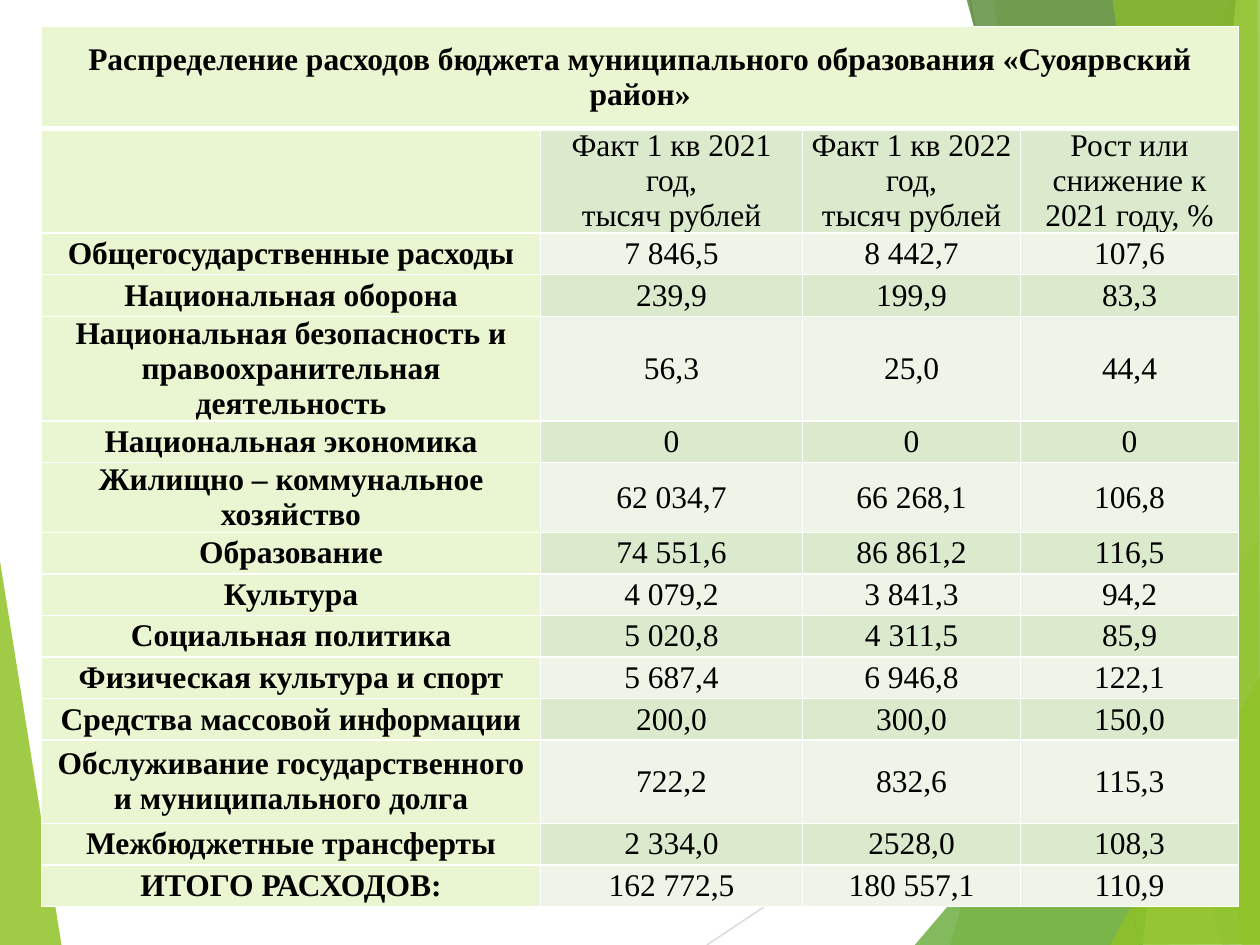
"""Builds the slide with the district budget expenditure table."""
from dataclasses import dataclass

from lxml.etree import SubElement
from pptx import Presentation
from pptx.dml.color import RGBColor
from pptx.enum.shapes import MSO_CONNECTOR as Connector
from pptx.enum.text import MSO_ANCHOR as Anchor, PP_ALIGN as Align
from pptx.oxml import parse_xml
from pptx.oxml.ns import nsdecls, qn
from pptx.util import Inches, Pt


@dataclass(frozen=True)
class Theme:
    font: str = "Times New Roman"
    size: int = 18
    text: str = "000000"
    border: str = "FFFFFF"
    label: str = "EAF6D1"
    dark_band: str = "DBE9CD"
    light_band: str = "EEF4E8"
    lime: str = "90C226"
    green: str = "54A021"
    forest: str = "3F7819"
    pale: str = "C0E474"
    pale_line: str = "D9D9D9"
    grey_line: str = "BFBFBF"


theme = Theme()


def add_facet(slide, color, opacity, corners):
    points = [(Inches(x), Inches(y)) for x, y in corners]
    builder = slide.shapes.build_freeform(*points[0])
    builder.add_line_segments(points[1:], close=True)
    facet = builder.convert_to_shape()
    facet.shadow.inherit = False
    facet.fill.solid()
    facet.fill.fore_color.rgb = RGBColor.from_string(color)
    facet.line.fill.background()
    fill_color = facet._element.spPr.find(qn("a:solidFill"))[0]
    SubElement(fill_color, qn("a:alpha")).set("val", str(opacity * 1000))


def fill_cell(cell, paragraphs, color, bold, anchor, top, bottom):
    cell.margin_left = cell.margin_right = Inches(0.07)
    cell.margin_top = cell.margin_bottom = 0
    cell.vertical_anchor = anchor
    cell.fill.solid()
    cell.fill.fore_color.rgb = RGBColor.from_string(color)
    for index, wording in enumerate(paragraphs):
        frame = cell.text_frame
        paragraph = frame.add_paragraph() if index else frame.paragraphs[0]
        paragraph.alignment = Align.CENTER
        run = paragraph.add_run()
        run.text = wording
        run.font.name = theme.font
        run.font.size = Pt(theme.size)
        run.font.bold = bold
        run.font.color.rgb = RGBColor.from_string(theme.text)
    sides = [("lnL", 1), ("lnR", 1), ("lnT", top), ("lnB", bottom)]
    for index, (side, width) in enumerate(sides):
        cell._tc.get_or_add_tcPr().insert(index, parse_xml(
            f'<a:{side} {nsdecls("a")} w="{Pt(width)}"><a:solidFill>'
            f'<a:srgbClr val="{theme.border}"/></a:solidFill></a:{side}>'))


prs = Presentation()
prs.slide_width, prs.slide_height = Inches(10), Inches(7.5)
slide = prs.slides.add_slide(prs.slide_layouts[6])

add_facet(slide, theme.lime, 85, [(-0.01, 4.39), (0.49, 7.51), (-0.01, 7.5)])

for color, start, end in [
    (theme.pale_line, (5.61, 7.5), (10.01, 4.57)),
    (theme.grey_line, (7.7, 0), (9.04, 7.5)),
]:
    ray = slide.shapes.add_connector(
        Connector.STRAIGHT, *[Inches(value) for value in start + end])
    ray.line.color.rgb = RGBColor.from_string(color)
    ray.line.width = Pt(0.75)
    SubElement(ray._element.spPr, qn("a:effectLst"))

for color, opacity, corners in [
    (theme.lime, 30, [(9.75, 0), (7.54, 7.5), (10.02, 7.51), (10.01, 0.01)]),
    (theme.lime, 20, [(7.88, -0.01), (9.19, 7.5), (10.01, 7.5), (10.01, -0.01)]),
    (theme.green, 72, [(7.26, 7.5), (10, 4.29), (10.01, 7.5)]),
    (theme.forest, 70, [(7.67, -0.01), (9.7, 7.5), (10.01, 7.49), (10.01, -0.01)]),
    (theme.pale, 70, [(9.81, -0.01), (9.07, 7.5), (10.01, 7.5), (10, -0.01)]),
    (theme.lime, 65, [(8.83, -0.01), (9.86, 7.5), (10, 7.5), (9.98, -0.01)]),
    (theme.lime, 80, [(8.81, 7.5), (10.01, 5.35), (10.01, 7.49)]),
]:
    add_facet(slide, color, opacity, corners)

title = "Распределение расходов бюджета муниципального образования «Суоярвский район»"
budget_rows = [
    (0.81, title, "", "", ""),
    (0.66, "", "Факт 1 кв 2021 год,\nтысяч рублей",
     "Факт 1 кв 2022 год,\nтысяч рублей", "Рост или снижение к 2021 году, %"),
    (0.33, "Общегосударственные расходы", "7 846,5", "8 442,7", "107,6"),
    (0.33, "Национальная оборона", "239,9", "199,9", "83,3"),
    (0.66, "Национальная безопасность и правоохранительная деятельность",
     "56,3", "25,0", "44,4"),
    (0.33, "Национальная экономика", "0", "0", "0"),
    (0.33, "Жилищно – коммунальное хозяйство", "62 034,7", "66 268,1", "106,8"),
    (0.33, "Образование", "74 551,6", "86 861,2", "116,5"),
    (0.33, "Культура", "4 079,2", "3 841,3", "94,2"),
    (0.33, "Социальная политика", "5 020,8", "4 311,5", "85,9"),
    (0.33, "Физическая культура и спорт", "5 687,4", "6 946,8", "122,1"),
    (0.33, "Средства массовой информации", "200,0", "300,0", "150,0"),
    (0.66, "Обслуживание государственного и муниципального долга",
     "722,2", "832,6", "115,3"),
    (0.33, "Межбюджетные трансферты", "2 334,0", "2528,0", "108,3"),
    (0.33, "ИТОГО РАСХОДОВ:", "162 772,5", "180 557,1", "110,9"),
]
column_widths = [3.96, 2.08, 1.73, 1.73]

budget = slide.shapes.add_table(
    len(budget_rows), len(column_widths),
    Inches(0.33), Inches(0.21), Inches(9.5), Inches(7.15)).table
for column, width in zip(budget.columns, column_widths):
    column.width = Inches(width)
budget.cell(0, 0).merge(budget.cell(0, 3))

for row, (height, *wordings) in enumerate(budget_rows):
    budget.rows[row].height = Inches(height)
    band = theme.dark_band if row % 2 else theme.light_band
    for column, wording in enumerate(wordings):
        is_label = row == 0 or column == 0
        fill_cell(
            budget.cell(row, column),
            wording.split("\n") if wording else [],
            theme.label if is_label else band,
            is_label,
            Anchor.TOP if (row, column) == (1, 3) else Anchor.MIDDLE,
            top=3 if row == 1 else 1,
            bottom=3 if row == 0 else 1)

prs.save("out.pptx")
